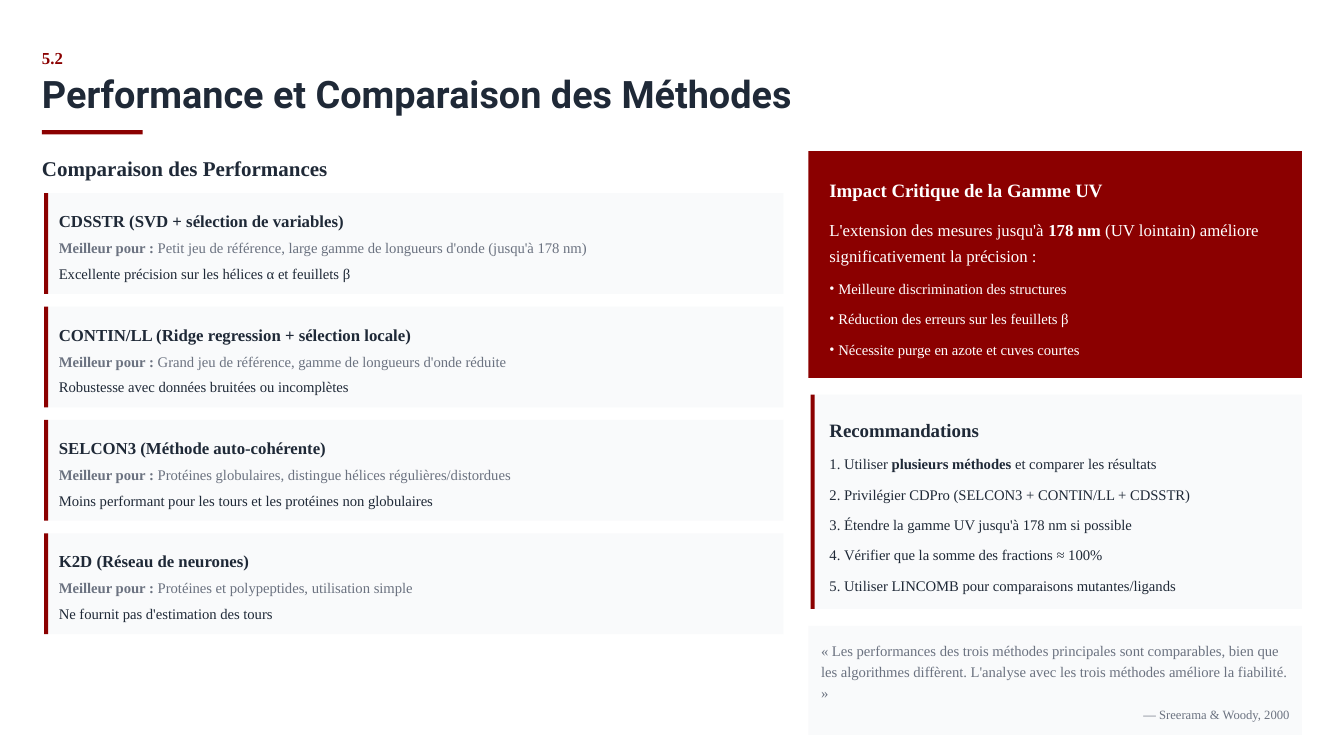
from lxml.etree import SubElement
from pptx import Presentation
from pptx.dml.color import RGBColor
from pptx.enum.shapes import MSO_SHAPE as Shape
from pptx.enum.text import MSO_ANCHOR as Anchor, MSO_AUTO_SIZE as AutoSize, PP_ALIGN as Align
from pptx.oxml.ns import qn
from pptx.util import Pt

RED = RGBColor(0x8B, 0x00, 0x00)
INK = RGBColor(0x1F, 0x29, 0x37)
GREY = RGBColor(0x6B, 0x72, 0x80)
PALE = RGBColor(0xF9, 0xFA, 0xFB)
WHITE = RGBColor(0xFF, 0xFF, 0xFF)
SERIF = "Times New Roman"

deck = Presentation()
deck.slide_width, deck.slide_height = Pt(960), Pt(540)
page = deck.slides.add_slide(deck.slide_layouts[3])
title, benefits, advice = page.placeholders


def add_panel(left, top, width, height, colour):
    panel = page.shapes.add_shape(Shape.RECTANGLE, Pt(left), Pt(top), Pt(width), Pt(height))
    panel.shadow.inherit = False
    panel.fill.solid()
    panel.fill.fore_color.rgb = colour
    panel.line.fill.background()
    return panel


def write(bounds, lines, box=None, font=SERIF, gap=0, align=Align.LEFT, marker=None, indent=0):
    left, top, width, height = [Pt(value) for value in bounds]
    if box is None:
        box = page.shapes.add_textbox(left, top, width, height)
    box.left, box.top, box.width, box.height = left, top, width, height
    frame = box.text_frame
    frame.word_wrap = True
    frame.auto_size = AutoSize.NONE
    frame.vertical_anchor = Anchor.MIDDLE
    frame.margin_left = frame.margin_right = frame.margin_top = frame.margin_bottom = 0
    for index, (size, spacing, colour, spans) in enumerate(lines):
        para = frame.add_paragraph() if index else frame.paragraphs[0]
        para.alignment = align
        para.line_spacing = spacing
        para.space_before = Pt(gap if index else 0)
        para.space_after = Pt(0)
        if marker:
            tag, key, value = marker
            properties = para._p.get_or_add_pPr()
            properties.set("marL", str(Pt(indent)))
            properties.set("indent", str(-Pt(indent)))
            SubElement(properties, qn("a:buFont"), typeface=SERIF)
            SubElement(properties, qn(tag)).set(key, value)
            para.font.name, para.font.size = font, Pt(size)
            para.font.bold = tag == "a:buAutoNum"
            para.font.color.rgb = colour
        for text, bold in spans:
            span = para.add_run()
            span.text = text
            span.font.name, span.font.size, span.font.bold = font, Pt(size), bold
            span.font.color.rgb = colour


write((30, 30, 906, 18), [(12, 1.3, RED, [("5.2", True)])])
write((30, 54, 914, 30),
      [(27, 0.9, INK, [("Performance et Comparaison des Méthodes", True)])],
      box=title, font="Roboto")
add_panel(30, 93, 72, 3, RED)
write((30, 108, 537, 21), [(15, 1.2, INK, [("Comparaison des Performances", True)])])

methods = [
    ("CDSSTR (SVD + sélection de variables)",
     "Petit jeu de référence, large gamme de longueurs d'onde (jusqu'à 178 nm)",
     "Excellente précision sur les hélices α et feuillets β"),
    ("CONTIN/LL (Ridge regression + sélection locale)",
     "Grand jeu de référence, gamme de longueurs d'onde réduite",
     "Robustesse avec données bruitées ou incomplètes"),
    ("SELCON3 (Méthode auto-cohérente)",
     "Protéines globulaires, distingue hélices régulières/distordues",
     "Moins performant pour les tours et les protéines non globulaires"),
    ("K2D (Réseau de neurones)",
     "Protéines et polypeptides, utilisation simple",
     "Ne fournit pas d'estimation des tours"),
]
for row, (method, best_use, remark) in enumerate(methods):
    top = 138 + 81 * row
    add_panel(31.5, top, 528, 72, PALE)
    add_panel(31.5, top, 3, 72, RED)
    write((42, top + 9, 514, 54), [
        (12, 1.3, INK, [(method, True)]),
        (10.5, 1.2, GREY, [("Meilleur pour :", True), (" " + best_use, False)]),
        (10.5, 1.2, INK, [(remark, False)]),
    ], gap=3.3)

impact_panel = add_panel(577.5, 108, 352.5, 162, RED)
write((592.5, 123, 329, 21), [(13.5, 1.3, WHITE, [("Impact Critique de la Gamme UV", True)])])
write((592.5, 153, 328, 36), [(12, 1.3, WHITE, [
    ("L'extension des mesures jusqu'à ", False),
    ("178 nm", True),
    (" (UV lointain) améliore significativement la précision :", False),
])])
impact_panel.element.addnext(benefits.element)
write((592.5, 198, 328, 57), [(10.5, 1.2, WHITE, [(text, False)]) for text in (
    "Meilleure discrimination des structures",
    "Réduction des erreurs sur les feuillets β",
    "Nécessite purge en azote et cuves courtes",
)], box=benefits, gap=6.6, marker=("a:buChar", "char", "•"), indent=6.3)

advice_panel = add_panel(579, 282, 351, 153, PALE)
add_panel(579, 282, 3, 153, RED)
write((592.5, 294, 332, 21), [(13.5, 1.3, INK, [("Recommandations", True)])])
advice_panel.element.addnext(advice.element)
write((592.5, 324, 331, 99), [(10.5, 1.2, INK, spans) for spans in (
    [("Utiliser ", False), ("plusieurs méthodes", True), (" et comparer les résultats", False)],
    [("Privilégier CDPro (SELCON3 + CONTIN/LL + CDSSTR)", False)],
    [("Étendre la gamme UV jusqu'à 178 nm si possible", False)],
    [("Vérifier que la somme des fractions ≈ 100%", False)],
    [("Utiliser LINCOMB pour comparaisons mutantes/ligands", False)],
)], box=advice, gap=6.6, marker=("a:buAutoNum", "type", "arabicPeriod"), indent=10.5)

add_panel(577.5, 447, 352.5, 78, PALE)
write((586.5, 456, 340, 45), [(10.5, 1.2, GREY, [(
    "« Les performances des trois méthodes principales sont comparables, bien que "
    "les algorithmes diffèrent. L'analyse avec les trois méthodes améliore la fiabilité. »",
    False)])])
write((582, 504, 339, 12), [(9, 1.1, GREY, [("— Sreerama & Woody, 2000", False)])],
      align=Align.RIGHT)

deck.save("out.pptx")
